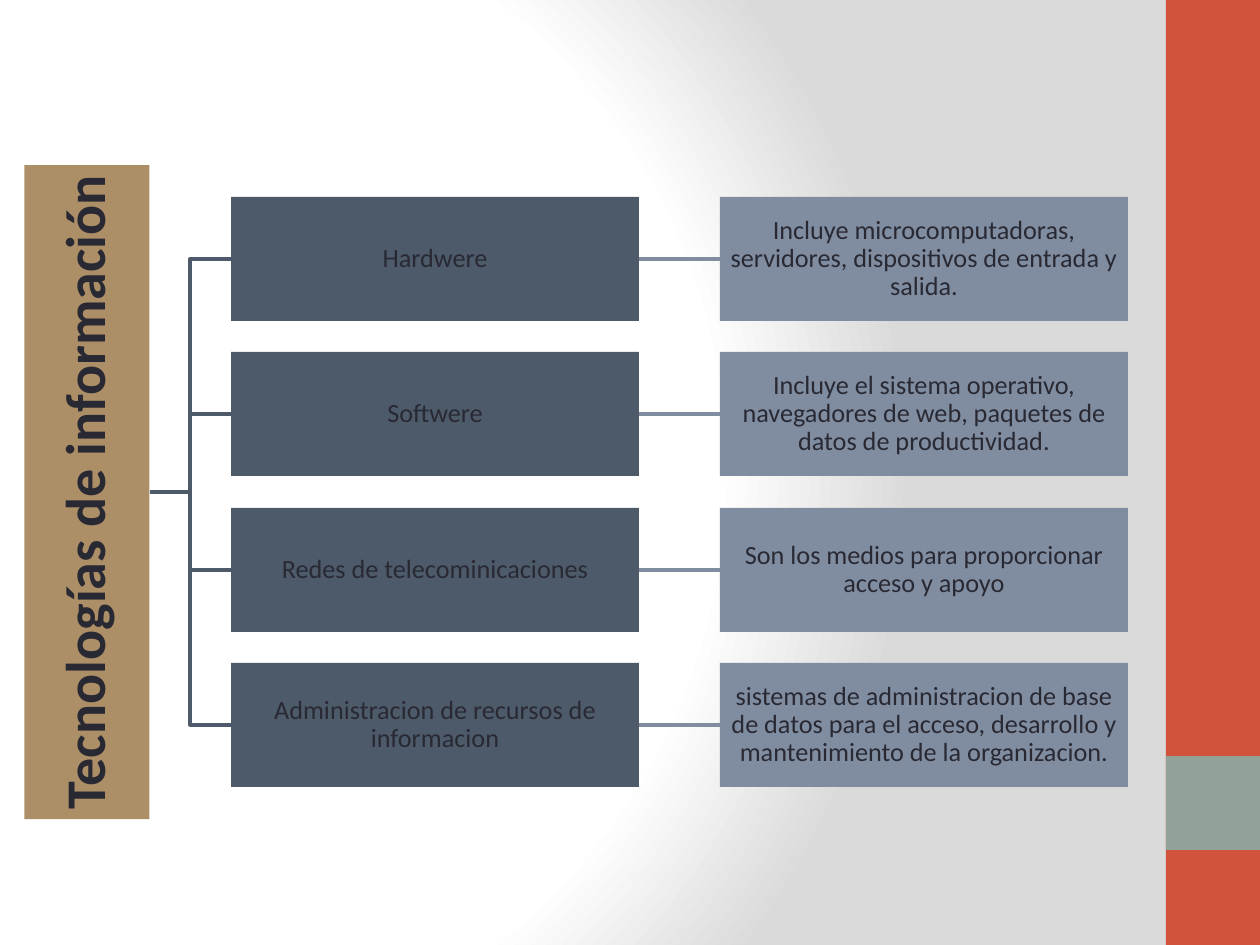
from lxml.etree import SubElement
from pptx import Presentation
from pptx.dml.color import RGBColor
from pptx.enum.shapes import MSO_CONNECTOR, MSO_SHAPE
from pptx.enum.text import MSO_ANCHOR, PP_ALIGN
from pptx.oxml import parse_xml
from pptx.oxml.ns import nsdecls, qn
from pptx.util import Emu, Pt

COLORS = {
    "white": "FFFFFF",
    "gray": "DADADA",
    "red": "D2533C",
    "sage": "93A299",
    "tan": "AD8F67",
    "slate": "4C5A6A",
    "steel": "808DA0",
    "ink": "292934",
}
TOPICS = [
    ("Hardwere",
     "Incluye microcomputadoras, servidores, dispositivos de entrada y salida."),
    ("Softwere",
     "Incluye el sistema operativo, navegadores de web, paquetes de datos de productividad."),
    ("Redes de telecominicaciones",
     "Son los medios para proporcionar acceso y apoyo"),
    ("Administracion de recursos de informacion",
     "sistemas de administracion de base de datos para el acceso, desarrollo y "
     "mantenimiento de la organizacion."),
]
SLIDE_W, SLIDE_H = 1260, 945
BOX_W, BOX_H = 408, 124
TOPIC_X, DETAIL_X = 231, 720
FIRST_Y, LAST_Y = 197, 663
TITLE_W, TITLE_H = 654, 125
TITLE_CX, TITLE_CY = 87, 492


def px(n):
    return Emu(round(n * 914400 / 126))


class Deck:
    """Holds the style and the current slide."""

    font = "Calibri"
    line_width = Pt(2)

    def __init__(self, prs):
        self.s = prs.slides.add_slide(prs.slide_layouts[6])

    def color(self, name):
        return RGBColor.from_string(COLORS[name])

    def background(self, inner, outer):
        """Radial gradient centred on the left part of the slide."""
        self.s.background.fill.gradient()
        old = self.s.element.find(".//" + qn("a:gradFill"))
        stops = "".join(
            f'<a:gs pos="{pos}"><a:srgbClr val="{COLORS[name]}"/></a:gs>'
            for pos, name in ((0, inner), (75000, inner), (100000, outer)))
        grad = parse_xml(
            f'<a:gradFill {nsdecls("a")} rotWithShape="1"><a:gsLst>{stops}</a:gsLst>'
            '<a:path path="circle">'
            '<a:fillToRect l="20000" t="50000" r="100000" b="50000"/>'
            '</a:path></a:gradFill>')
        old.getparent().replace(old, grad)

    def rect(self, x, y, w, h, fill):
        sp = self.s.shapes.add_shape(MSO_SHAPE.RECTANGLE, px(x), px(y), px(w), px(h))
        sp.shadow.inherit = False
        sp.fill.solid()
        sp.fill.fore_color.rgb = self.color(fill)
        sp.line.fill.background()
        return sp

    def box(self, x, y, w, h, fill, text, size=15, bold=False, inset=1):
        sp = self.rect(x, y, w, h, fill)
        tf = sp.text_frame
        tf.word_wrap = True
        tf.vertical_anchor = MSO_ANCHOR.MIDDLE
        tf.margin_left = tf.margin_right = tf.margin_top = tf.margin_bottom = px(inset)
        p = tf.paragraphs[0]
        p.text = text
        p.alignment = PP_ALIGN.CENTER
        p.line_spacing = 0.9
        p.font.name = self.font
        p.font.size = Pt(size)
        p.font.bold = bold
        p.font.color.rgb = self.color("ink")
        return sp

    def connector(self, kind, x1, y1, x2, y2, color):
        c = self.s.shapes.add_connector(kind, px(x1), px(y1), px(x2), px(y2))
        c.line.width = self.line_width
        c.line.color.rgb = self.color(color)
        SubElement(c._element.spPr, qn("a:effectLst"))
        return c


def main():
    prs = Presentation()
    prs.slide_width, prs.slide_height = px(SLIDE_W), px(SLIDE_H)
    deck = Deck(prs)
    deck.background("white", "gray")
    deck.rect(1166, 0, 94, SLIDE_H, "red")
    deck.rect(1166, 756, 94, 94, "sage")

    title = deck.box(TITLE_CX - TITLE_W / 2, TITLE_CY - TITLE_H / 2, TITLE_W, TITLE_H,
                     "tan", "Tecnologías de información", size=32, bold=True, inset=3)
    title.rotation = 270

    pitch = (LAST_Y - FIRST_Y) / (len(TOPICS) - 1)
    for i, (topic, detail) in enumerate(TOPICS):
        y = round(FIRST_Y + i * pitch)
        mid = y + BOX_H // 2
        left = deck.box(TOPIC_X, y, BOX_W, BOX_H, "slate", topic)
        right = deck.box(DETAIL_X, y, BOX_W, BOX_H, "steel", detail)
        deck.connector(MSO_CONNECTOR.ELBOW, TITLE_CX + TITLE_H / 2, TITLE_CY,
                       TOPIC_X, mid, "slate")
        link = deck.connector(MSO_CONNECTOR.STRAIGHT, TOPIC_X + BOX_W, mid,
                              DETAIL_X, mid, "steel")
        link.begin_connect(left, 3)
        link.end_connect(right, 1)

    prs.save("out.pptx")


if __name__ == "__main__":
    main()
